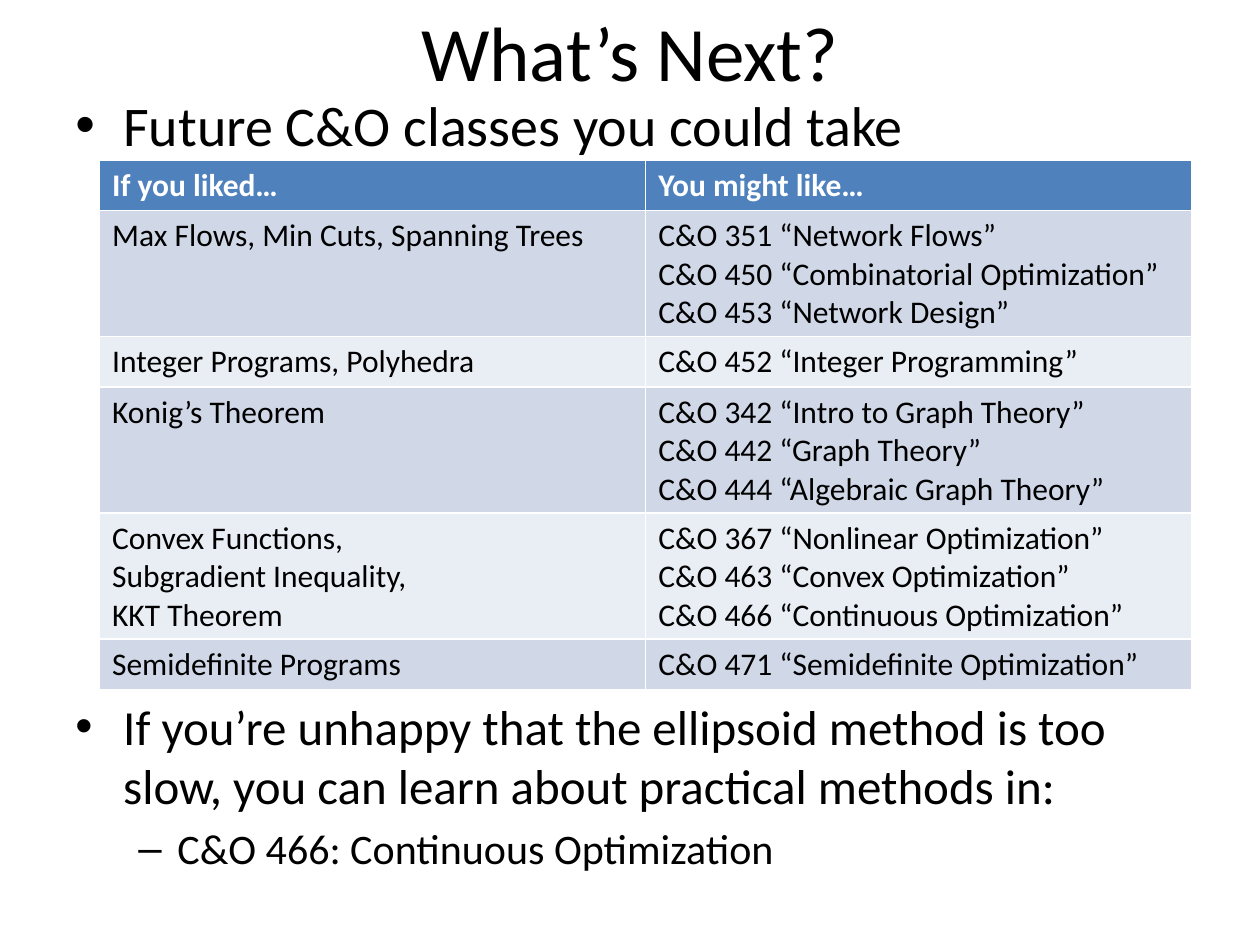
import pptx
import pptx.util
import pptx.dml.color
import pptx.enum.text
import lxml.etree
import pptx.oxml.ns

Inches = pptx.util.Inches
RGBColor = pptx.dml.color.RGBColor

BLACK = RGBColor(0x00, 0x00, 0x00)
WHITE = RGBColor(0xFF, 0xFF, 0xFF)
HEADER_BLUE = RGBColor(0x4F, 0x81, 0xBD)
BANDS = (RGBColor(0xD0, 0xD8, 0xE8), RGBColor(0xE9, 0xED, 0xF4))
FONT = "Calibri"

TITLE = "What’s Next?"
BULLET_GROUPS = [
    (0.67, 0.6, [("Future C&O classes you could take", 32, 0)]),
    (5.48, 1.6, [
        ("If you’re unhappy that the ellipsoid method is too slow, "
         "you can learn about practical methods in:", 28, 0),
        ("C&O 466: Continuous Optimization", 24, 1),
    ]),
]
BULLET_LEVELS = [("•", 0.38, 0.38), ("–", 0.81, 0.31)]
COURSES = [
    ("If you liked…", "You might like…"),
    ("Max Flows, Min Cuts, Spanning Trees",
     "C&O 351 “Network Flows”\vC&O 450 “Combinatorial Optimization”\v"
     "C&O 453 “Network Design”"),
    ("Integer Programs, Polyhedra", "C&O 452 “Integer Programming”"),
    ("Konig’s Theorem",
     "C&O 342 “Intro to Graph Theory”\nC&O 442 “Graph Theory”\n"
     "C&O 444 “Algebraic Graph Theory”"),
    ("Convex Functions,\vSubgradient Inequality,\vKKT Theorem",
     "C&O 367 “Nonlinear Optimization”\vC&O 463 “Convex Optimization”\n"
     "C&O 466 “Continuous Optimization”"),
    ("Semidefinite Programs", "C&O 471 “Semidefinite Optimization”"),
]
LINE_HEIGHT = 0.3
CELL_PADDING = 0.1


def style_runs(paragraph, size, color=BLACK, bold=False):
    for run in paragraph.runs:
        run.font.name = FONT
        run.font.size = pptx.util.Pt(size)
        run.font.bold = bold
        run.font.color.rgb = color


def add_bullet(paragraph, level):
    mark, margin, hanging = BULLET_LEVELS[level]
    properties = paragraph._p.get_or_add_pPr()
    properties.set("marL", str(Inches(margin)))
    properties.set("indent", str(-Inches(hanging)))
    font = lxml.etree.SubElement(properties, pptx.oxml.ns.qn("a:buFont"))
    font.set("typeface", "Arial")
    bullet = lxml.etree.SubElement(properties, pptx.oxml.ns.qn("a:buChar"))
    bullet.set("char", mark)


def add_bullets(slide, top, height, items):
    frame = slide.shapes.add_textbox(
        Inches(0.5), Inches(top), Inches(9), Inches(height)).text_frame
    frame.word_wrap = True
    frame.text = "\n".join(text for text, _, _ in items)
    for index, (paragraph, (_, size, level)) in enumerate(zip(frame.paragraphs, items)):
        paragraph.level = level
        paragraph.space_before = pptx.util.Pt(size * 0.2 if index else 0)
        add_bullet(paragraph, level)
        style_runs(paragraph, size)


def add_courses(slide):
    line_counts = [max(len(text.splitlines()) for text in row) for row in COURSES]
    heights = [CELL_PADDING + LINE_HEIGHT * count for count in line_counts]
    courses = slide.shapes.add_table(
        len(COURSES), 2, Inches(0.79), Inches(1.27),
        Inches(8.67), Inches(sum(heights))).table
    for index, (row, height) in enumerate(zip(COURSES, heights)):
        courses.rows[index].height = Inches(height)
        header = index == 0
        for column, text in enumerate(row):
            cell = courses.cell(index, column)
            cell.fill.solid()
            cell.fill.fore_color.rgb = HEADER_BLUE if header else BANDS[(index - 1) % 2]
            cell.text_frame.text = text
            for paragraph in cell.text_frame.paragraphs:
                style_runs(paragraph, 18, WHITE if header else BLACK, header)


def main():
    deck = pptx.Presentation()
    deck.slide_width, deck.slide_height = Inches(10), Inches(7.5)
    slide = deck.slides.add_slide(deck.slide_layouts[5])

    title = slide.shapes.title
    title.left, title.top = Inches(0.5), Inches(-0.1)
    title.width, title.height = Inches(9), Inches(1.01)
    title.text_frame.text = TITLE
    title.text_frame.vertical_anchor = pptx.enum.text.MSO_ANCHOR.MIDDLE
    heading = title.text_frame.paragraphs[0]
    heading.alignment = pptx.enum.text.PP_ALIGN.CENTER
    style_runs(heading, 44)

    for top, height, items in BULLET_GROUPS:
        add_bullets(slide, top, height, items)
    add_courses(slide)
    deck.save("out.pptx")


if __name__ == "__main__":
    main()
